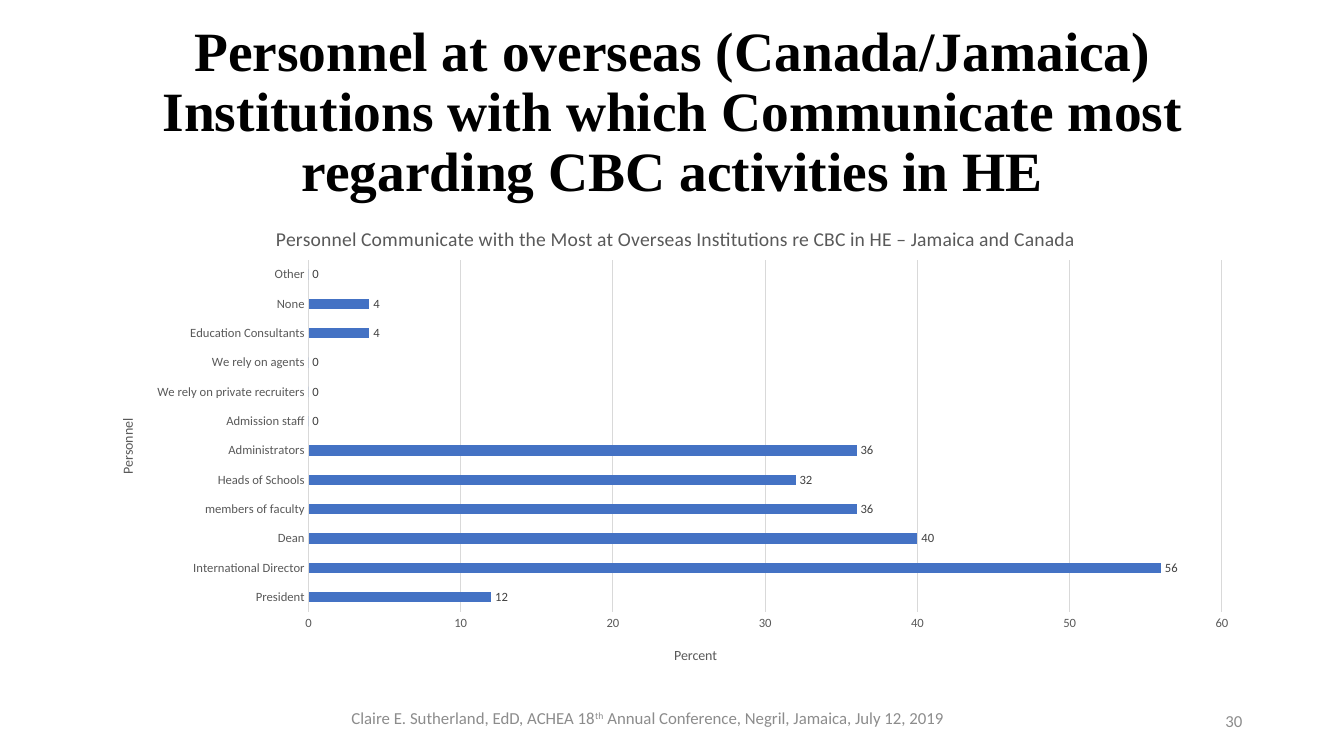
"""Builds a slide with a bar chart of overseas personnel contacted about CBC activities."""
from dataclasses import dataclass

from lxml import etree
from pptx import Presentation
from pptx import util as u
from pptx.chart import data as chart_data
from pptx.dml.color import RGBColor
from pptx.enum import chart as ch
from pptx.enum import text
from pptx.oxml import ns


@dataclass(frozen=True)
class Theme:
    """Colours, fonts and type sizes of the slide."""
    black: str = "000000"
    footer: str = "8C8C8C"
    axis: str = "595959"
    label: str = "404040"
    grid: str = "D9D9D9"
    bar: str = "4472C4"
    heading_font: str = "Times New Roman"
    body_font: str = "Calibri"
    heading_size: float = 39.6
    chart_title_size: float = 14
    footer_size: float = 12
    axis_title_size: float = 10
    tick_size: float = 9


THEME = Theme()
CHART_BOX = (0.92, 2, 11.5, 4.76)
PERSONNEL = {
    "President": 12,
    "International Director": 56,
    "Dean": 40,
    "members of faculty": 36,
    "Heads of Schools": 32,
    "Administrators": 36,
    "Admission staff": 0,
    "We rely on private recruiters": 0,
    "We rely on agents": 0,
    "Education Consultants": 4,
    "None": 4,
    "Other": 0,
}


def style_font(font, size, colour, name=THEME.body_font, bold=False):
    """Set the size, colour, typeface and weight of a font."""
    font.size = u.Pt(size)
    font.color.rgb = RGBColor.from_string(colour)
    font.name = name
    font.bold = bold


def add_text(page, place, spans, align, size, colour, name=THEME.body_font, bold=False):
    """Add a wrapped, middle-anchored one-paragraph text box and return it."""
    box = page.shapes.add_textbox(*map(u.Inches, place))
    frame = box.text_frame
    frame.word_wrap = True
    frame.vertical_anchor = text.MSO_ANCHOR.MIDDLE
    para = frame.paragraphs[0]
    para.alignment = align
    for words in spans:
        span = para.add_run()
        span.text = words
        style_font(span.font, size, colour, name, bold)
    return box


def set_layout(element, index, **inches):
    """Fix a chart part at a place given in inches from the chart corner."""
    for old in element.findall(ns.qn("c:layout")):
        element.remove(old)
    layout = etree.Element(ns.qn("c:layout"))
    manual = etree.SubElement(layout, ns.qn("c:manualLayout"))
    settings = {"xMode": "edge", "yMode": "edge"}
    if "w" in inches:
        settings = {"layoutTarget": "inner", **settings}
    for key, length in inches.items():
        extent = CHART_BOX[2] if key in "xw" else CHART_BOX[3]
        settings[key] = str(length / extent)
    for key, setting in settings.items():
        etree.SubElement(manual, ns.qn(f"c:{key}")).set("val", setting)
    element.insert(index, layout)


def set_title(title, words, size, x, y):
    """Write, style and place a chart or axis title."""
    title.text_frame.text = words
    style_font(title.text_frame.paragraphs[0].runs[0].font, size, THEME.axis)
    set_layout(title._element, 1, x=x, y=y)


def style_line(line):
    """Give a line the thin grey grid look."""
    line.color.rgb = RGBColor.from_string(THEME.grid)
    line.width = u.Pt(0.75)


def style_axes(chart):
    """Style both axes with their titles, ticks and grid."""
    people, percent = chart.category_axis, chart.value_axis
    for axis in (people, percent):
        axis.major_tick_mark = axis.minor_tick_mark = ch.XL_TICK_MARK.NONE
        style_font(axis.tick_labels.font, THEME.tick_size, THEME.axis)
    people.has_major_gridlines = False
    style_line(people.format.line)
    percent.minimum_scale, percent.maximum_scale, percent.major_unit = 0, 60, 10
    percent.tick_labels.number_format = "0"
    percent.tick_labels.number_format_is_linked = False
    percent.format.line.fill.background()
    percent.has_major_gridlines = True
    style_line(percent.major_gridlines.format.line)
    set_title(people.axis_title, "Personnel", THEME.axis_title_size, 0.23, 2.13)
    body = people.axis_title.text_frame._txBody.find(ns.qn("a:bodyPr"))
    body.set("rot", "-5400000")
    body.set("vert", "horz")
    set_title(percent.axis_title, "Percent", THEME.axis_title_size, 5.74, 4.39)


def add_personnel_chart(page):
    """Add the bar chart with value labels."""
    figures = chart_data.CategoryChartData(number_format="0")
    figures.categories = list(PERSONNEL)
    figures.add_series("Series 1", list(PERSONNEL.values()))
    chart = page.shapes.add_chart(
        ch.XL_CHART_TYPE.BAR_CLUSTERED, *map(u.Inches, CHART_BOX), figures).chart
    style_font(chart.font, THEME.axis_title_size, THEME.black)
    chart.has_legend = False
    chart.has_title = True
    set_title(
        chart.chart_title,
        "Personnel Communicate with the Most at Overseas Institutions re CBC in HE"
        " – Jamaica and Canada",
        THEME.chart_title_size, 1.78, 0.2)
    style_axes(chart)
    plot = chart.plots[0]
    plot.gap_width = 182
    plot.vary_by_categories = False
    bars = plot.series[0]
    bars.format.fill.solid()
    bars.format.fill.fore_color.rgb = RGBColor.from_string(THEME.bar)
    labels = bars.data_labels
    labels.show_value = True
    labels.position = ch.XL_LABEL_POSITION.OUTSIDE_END
    labels.number_format = "0"
    labels.number_format_is_linked = False
    style_font(labels.font, THEME.tick_size, THEME.label)
    plot_area = chart._chartSpace.find(f".//{ns.qn('c:plotArea')}")
    set_layout(plot_area, 0, x=2.14, y=0.58, w=9.06, h=3.49)


def add_footer(page):
    """Add the conference line and the slide number."""
    box = add_text(
        page, (1.11, 6.66, 10.63, 0.69),
        ("Claire E. Sutherland, EdD, ACHEA 18", "th",
         " Annual Conference, Negril, Jamaica, July 12, 2019"),
        text.PP_ALIGN.CENTER, THEME.footer_size, THEME.footer)
    box.text_frame.margin_top = u.Inches(0.29)
    ordinal = box.text_frame.paragraphs[0].runs[1]
    ordinal._r.get_or_add_rPr().set("baseline", "30000")
    add_text(page, (9.42, 6.95, 3, 0.4), ("30",), text.PP_ALIGN.RIGHT,
             THEME.footer_size, THEME.footer)


def main():
    """Build and save the slide."""
    deck = Presentation()
    deck.slide_width, deck.slide_height = u.Inches(13.33), u.Inches(7.5)
    page = deck.slides.add_slide(deck.slide_layouts[6])
    heading = add_text(
        page, (0.92, 0.4, 11.5, 1.45),
        ("Personnel at overseas (Canada/Jamaica) Institutions with which Communicate"
         " most regarding CBC activities in HE",),
        text.PP_ALIGN.CENTER, THEME.heading_size, THEME.black, THEME.heading_font, True)
    heading.text_frame.paragraphs[0].line_spacing = 0.9
    add_footer(page)
    add_personnel_chart(page)
    deck.save("out.pptx")


if __name__ == "__main__":
    main()
